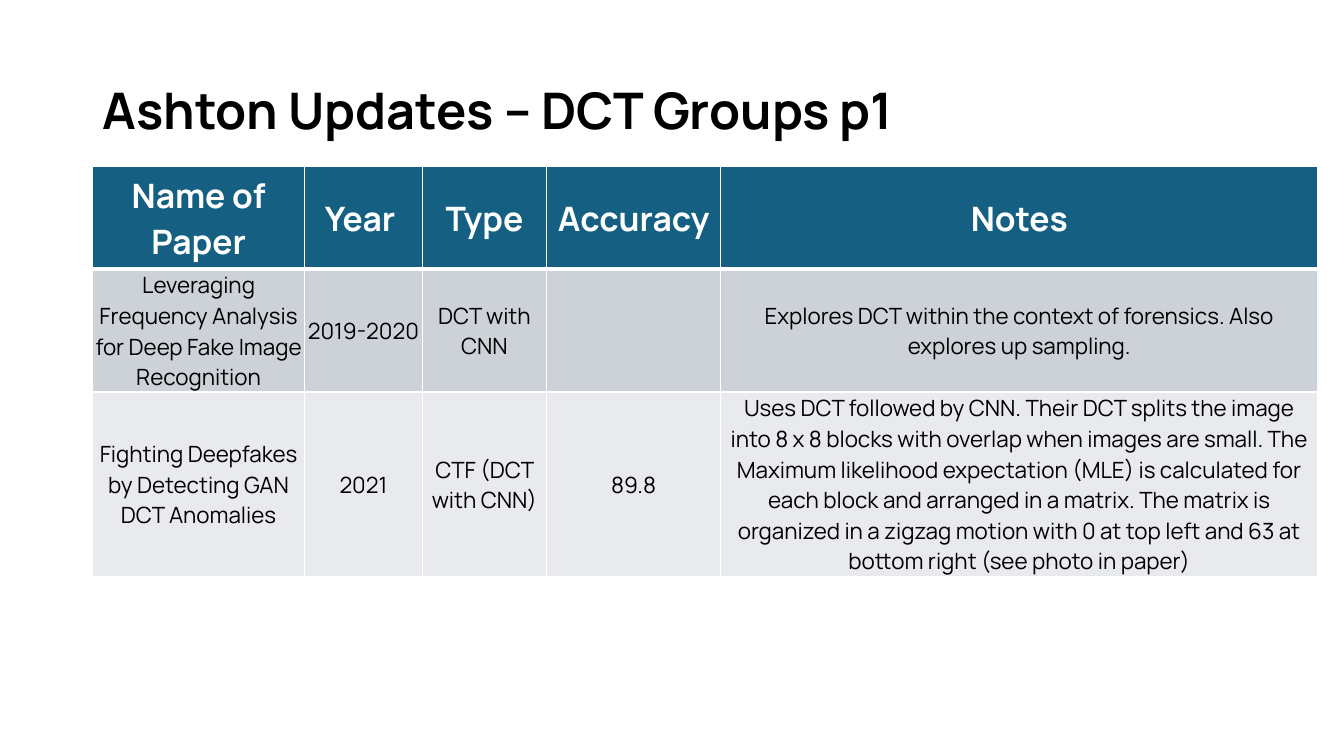
"""Builds the DCT papers table slide."""
from lxml import etree
from pptx import Presentation
from pptx.dml.color import RGBColor
from pptx.enum import text
from pptx.oxml.ns import qn
from pptx import util as u

COLORS = {"black": "000000", "white": "FFFFFF", "head": "156082",
          "odd": "CCD2D8", "even": "E8EAED"}
TITLE = {"size": u.Pt(36), "bold": True, "name": "Manrope"}
HEAD = {"size": u.Pt(24), "bold": True, "name": "Manrope"}
BODY = {"size": u.Pt(16), "bold": False, "name": "Manrope"}
COLUMNS = [2.1, 1.17, 1.23, 1.73, 5.92]
HEIGHTS = [1.02, 1.22, 1.83]
ROWS = [
    ["Name of Paper", "Year ", "Type", "Accuracy", "Notes"],
    ["Leveraging Frequency Analysis for Deep Fake Image Recognition",
     "2019-2020", "DCT with CNN", "",
     "Explores DCT within the context of forensics. Also explores up sampling."],
    ["Fighting Deepfakes by Detecting GAN DCT Anomalies",
     "2021", "CTF (DCT with CNN)", "89.8",
     "Uses DCT followed by CNN. Their DCT splits the image into 8 x 8 blocks "
     "with overlap when images are small. The Maximum likelihood expectation "
     "(MLE) is calculated for each block and arranged in a matrix. The matrix "
     "is organized in a zigzag motion with 0 at top left and 63 at bottom "
     "right (see photo in paper)"],
]


class Deck:
    def __init__(self):
        self.prs = Presentation()
        self.prs.slide_width = u.Inches(13.33)
        self.prs.slide_height = u.Inches(7.5)
        self.s = self.prs.slides.add_slide(self.prs.slide_layouts[6])

    def color(self, key):
        return RGBColor.from_string(COLORS[key])

    def words(self, p, words, style, color):
        if words:
            p.add_run().text = words
        for font in [p.font] + [r.font for r in p.runs]:
            for name, value in style.items():
                setattr(font, name, value)
            font.color.rgb = self.color(color)

    def title(self, words, box):
        tf = self.s.shapes.add_textbox(*map(u.Inches, box)).text_frame
        tf.word_wrap = True
        tf.vertical_anchor = text.MSO_ANCHOR.MIDDLE
        p = tf.paragraphs[0]
        p.line_spacing = 0.9
        self.words(p, words, TITLE, "black")

    def borders(self, cell, bottom):
        props = cell._tc.get_or_add_tcPr()
        widths = {"a:lnL": 1, "a:lnR": 1, "a:lnT": 1, "a:lnB": bottom}
        for i, (tag, width) in enumerate(widths.items()):
            ln = etree.Element(qn(tag), w=str(u.Pt(width)))
            fill = etree.SubElement(ln, qn("a:solidFill"))
            etree.SubElement(fill, qn("a:srgbClr"), val=COLORS["white"])
            props.insert(i, ln)

    def cell(self, cell, words, style, color, fill, bottom):
        layout = {"vertical_anchor": text.MSO_ANCHOR.MIDDLE,
                  "margin_left": u.Inches(0.01), "margin_right": u.Inches(0.01),
                  "margin_top": u.Inches(0.01), "margin_bottom": 0}
        for name, value in layout.items():
            setattr(cell, name, value)
        cell.fill.solid()
        cell.fill.fore_color.rgb = self.color(fill)
        self.borders(cell, bottom)
        p = cell.text_frame.paragraphs[0]
        p.alignment = text.PP_ALIGN.CENTER
        self.words(p, words, style, color)

    def table(self, left, top):
        box = map(u.Inches, (left, top, sum(COLUMNS), sum(HEIGHTS)))
        table = self.s.shapes.add_table(len(ROWS), len(COLUMNS), *box).table
        for column, width in zip(table.columns, COLUMNS):
            column.width = u.Inches(width)
        looks = [(HEAD, "white", "head", 3), (BODY, "black", "odd", 1),
                 (BODY, "black", "even", 1)]
        for row, height, values, look in zip(table.rows, HEIGHTS, ROWS, looks):
            row.height = u.Inches(height)
            for cell, words in zip(row.cells, values):
                self.cell(cell, words, *look)


def main():
    deck = Deck()
    deck.title("Ashton Updates – DCT Groups p1", (0.92, 0.4, 11.5, 1.45))
    deck.table(0.92, 1.65)
    deck.prs.save("out.pptx")


if __name__ == "__main__":
    main()
